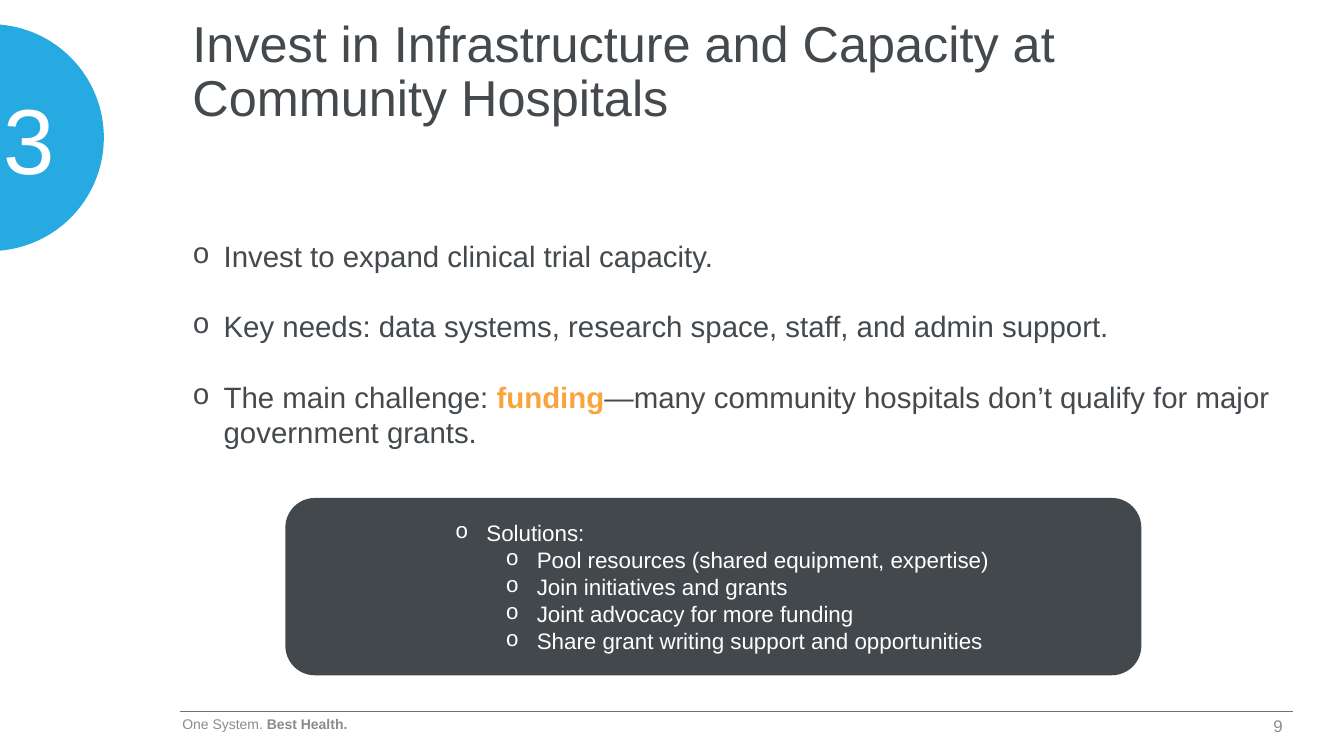
from lxml.etree import SubElement
from pptx import Presentation
from pptx.dml.color import RGBColor
from pptx.enum.shapes import MSO_CONNECTOR, MSO_SHAPE
from pptx.enum.text import MSO_ANCHOR, PP_ALIGN
from pptx.oxml.ns import qn
from pptx.util import Inches, Pt

# Content: each paragraph is a list of (text, colour, bold) runs
INK = RGBColor(0x44, 0x49, 0x4D)
PANEL = RGBColor(0x43, 0x48, 0x4C)
BLUE = RGBColor(0x27, 0xAA, 0xE2)
ORANGE = RGBColor(0xF9, 0xA4, 0x3D)
GRAY = RGBColor(0x8C, 0x8C, 0x8C)
RULE = RGBColor(0x76, 0x71, 0x71)
WHITE = RGBColor(0xFF, 0xFF, 0xFF)

TITLE = "Invest in Infrastructure and Capacity at Community Hospitals"
NUMBER = "3"
POINTS = [
    [("Invest to expand clinical trial capacity.", INK, False)],
    [("Key needs: data systems, research space, staff, and admin support.", INK, False)],
    [("The main challenge: ", INK, False), ("funding", ORANGE, True),
     ("—many community hospitals don’t qualify for major government grants.", INK, False)],
]
HEAD = "Solutions:"
IDEAS = [
    "Pool resources (shared equipment, expertise)",
    "Join initiatives and grants",
    "Joint advocacy for more funding",
    "Share grant writing support and opportunities",
]
FOOTER = [("One System. ", GRAY, False), ("Best Health.", GRAY, True)]
PAGE = "9"

HANG = 0.31  # bullet indent
STEP = 0.5   # indent per level

deck = Presentation()
deck.slide_width, deck.slide_height = Inches(13.33), Inches(7.5)
slide = deck.slides.add_slide(deck.slide_layouts[6])


def place(box):
    return [Inches(n) for n in box]


def write(shape, paras, size, anchor=MSO_ANCHOR.TOP, align=PP_ALIGN.LEFT, levels=None):
    """Fill a shape with paragraphs; levels turns on bullets."""
    frame = shape.text_frame
    frame.word_wrap = True
    frame.vertical_anchor = anchor
    for i, runs in enumerate(paras):
        para = frame.paragraphs[0] if i == 0 else frame.add_paragraph()
        para.alignment = align
        if levels:
            mark(para, levels[i])
        for text, color, bold in runs:
            run = para.add_run()
            run.text = text
            font = run.font
            font.name, font.size, font.bold = "Arial", Pt(size), bold
            font.color.rgb = color
    return frame


def mark(para, level):
    para.level = level
    props = para._p.get_or_add_pPr()
    props.set("marL", str(Inches(level * STEP + HANG)))
    props.set("indent", str(-Inches(HANG)))
    SubElement(props, qn("a:buFont")).set("typeface", "Courier New")
    SubElement(props, qn("a:buChar")).set("char", "o")


def add_text(box, paras, size, **style):
    return write(slide.shapes.add_textbox(*place(box)), paras, size, **style)


def add_form(kind, box, color):
    shape = slide.shapes.add_shape(kind, *place(box))
    shape.shadow.inherit = False
    shape.fill.solid()
    shape.fill.fore_color.rgb = color
    shape.line.fill.background()
    return shape


# Footer
rule = slide.shapes.add_connector(MSO_CONNECTOR.STRAIGHT, *place((1.79, 7.06, 12.82, 7.06)))
rule.line.color.rgb, rule.line.width = RULE, Pt(0.5)
SubElement(rule._element.spPr, qn("a:effectLst"))
add_text((1.71, 7.05, 2.01, 0.57), [FOOTER], 10)
add_text((9.82, 7, 3, 0.4), [[(PAGE, GRAY, False)]], 12,
         anchor=MSO_ANCHOR.MIDDLE, align=PP_ALIGN.RIGHT)

# Title
title = add_text((1.81, 0, 8.96, 1.45), [[(TITLE, INK, False)]], 36, anchor=MSO_ANCHOR.MIDDLE)
title.paragraphs[0].line_spacing = 0.9

# Section number, pushed onto the visible half of the circle
disc = add_form(MSO_SHAPE.OVAL, (-1.22, 0.24, 2.25, 2.25), BLUE)
label = write(disc, [[(NUMBER, WHITE, False)]], 66,
              anchor=MSO_ANCHOR.MIDDLE, align=PP_ALIGN.CENTER)
label.margin_left = Inches(0.86)

# Main points
body = add_text((1.81, 1.96, 11.01, 3.28), POINTS, 21, levels=[0] * len(POINTS))
for para in body.paragraphs[:2]:
    para.line_spacing = 2.0
body.paragraphs[2].space_before = Pt(25)

# Solutions panel
panel = add_form(MSO_SHAPE.ROUNDED_RECTANGLE, (2.83, 4.94, 8.49, 1.76), PANEL)
write(panel, [[(text, WHITE, False)] for text in [HEAD] + IDEAS], 16,
      anchor=MSO_ANCHOR.MIDDLE, levels=[3] + [4] * len(IDEAS))

deck.save("out.pptx")
